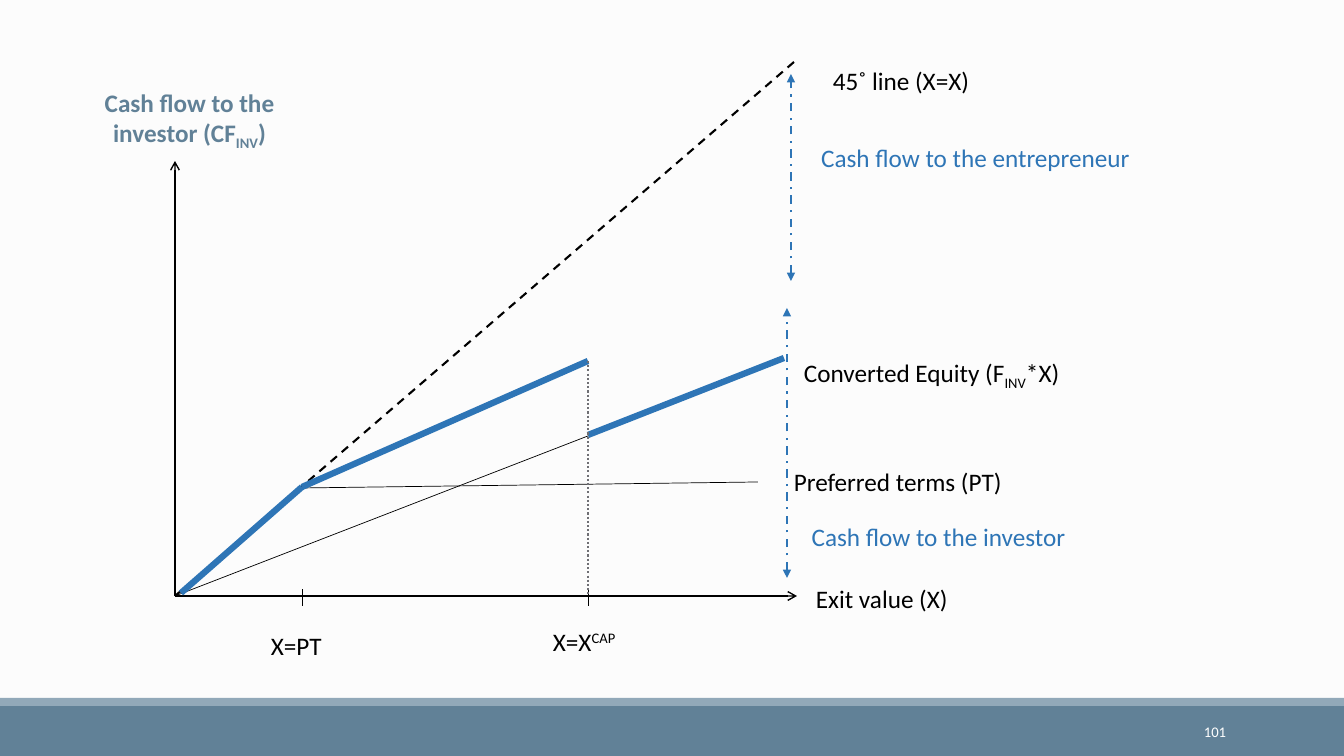
"""Build the slide on investor cash flow against exit value."""
import pptx
import pptx.util
import pptx.dml.color
import pptx.enum.dml
import pptx.enum.shapes
import pptx.enum.text
import pptx.oxml
import pptx.oxml.ns

RGBColor = pptx.dml.color.RGBColor
PAPER = RGBColor(0xFC, 0xFC, 0xFC)
SLATE = RGBColor(0x61, 0x81, 0x97)
MIST = RGBColor(0x92, 0xA9, 0xB9)
BLUE = RGBColor(0x2E, 0x75, 0xB6)
GREY = RGBColor(0x6F, 0x6F, 0x74)
BLACK = RGBColor(0, 0, 0)
WHITE = RGBColor(0xFF, 0xFF, 0xFF)

DASH = pptx.enum.dml.MSO_LINE
ALIGN = pptx.enum.text.PP_ALIGN
SCALE = 914400 / 100.8
WIDE, HIGH = 1344, 756
LEFT, BASE = 175, 596
PREF, CAP = 302, 588
SUB, SUPER = -25000, 30000


def px(*nums):
    """Turn px lengths into EMU."""
    return [round(num * SCALE) for num in nums]


def add_bar(slide, top, height, color):
    """Add a band across the full slide width."""
    kind = pptx.enum.shapes.MSO_SHAPE.RECTANGLE
    bar = slide.shapes.add_shape(kind, *px(0, top, WIDE, height))
    bar.shadow.inherit = False
    bar.fill.solid()
    bar.fill.fore_color.rgb = color
    bar.line.fill.background()


def add_line(slide, start, end, color=BLACK, width=0.5, dash=None, head=None, tail=None):
    """Add a straight line with optional dash and arrowheads."""
    kind = pptx.enum.shapes.MSO_CONNECTOR.STRAIGHT
    line = slide.shapes.add_connector(kind, *px(*start, *end))
    line.line.color.rgb = color
    line.line.width = pptx.util.Pt(width)
    if dash:
        line.line.dash_style = dash
    pen = line.line._get_or_add_ln()
    for tag, tip in (("a:headEnd", head), ("a:tailEnd", tail)):
        if tip:
            mark = pptx.oxml.parse_xml(f"<{tag} {pptx.oxml.ns.nsdecls('a')}/>")
            mark.set("type", tip)
            pen.append(mark)
    none = pptx.oxml.parse_xml(f"<a:effectLst {pptx.oxml.ns.nsdecls('a')}/>")
    line._element.spPr.append(none)


def add_label(slide, box, parts, color=BLACK, align=ALIGN.LEFT, size=18, bold=False):
    """Add a text box from (text, baseline) parts."""
    frame = slide.shapes.add_textbox(*px(*box)).text_frame
    frame.word_wrap = True
    para = frame.paragraphs[0]
    para.alignment = align
    for text, shift in parts:
        run = para.add_run()
        run.text = text
        run.font.name = "Calibri"
        run.font.size = pptx.util.Pt(size)
        run.font.bold = bold
        run.font.color.rgb = color
        if shift:
            run._r.get_or_add_rPr().set("baseline", str(shift))
    return frame


def add_axes(slide):
    """Add both axes and the ticks on the exit value axis."""
    for tip in ((LEFT, 161), (797, BASE)):
        add_line(slide, tip, (LEFT, BASE), width=1, head="arrow")
    for tick in (PREF, CAP):
        add_line(slide, (tick, 606), (tick, 589))


def add_curves(slide):
    """Add the guide lines, the payoff segments and the spans."""
    add_line(slide, (794, 62), (LEFT, BASE), width=1.5, dash=DASH.DASH)
    add_line(slide, (758, 482), (PREF, 488))
    add_line(slide, (784, 360), (LEFT, BASE))
    for span, top, low in ((787, 308, 578), (791, 74, 281)):
        add_line(slide, (span, low), (span, top), BLUE, 1.5, DASH.DASH_DOT,
                 "triangle", "triangle")
    for start, end in (
        ((CAP, 361), (PREF, 487)),
        ((181, 593), (PREF, 487)),
        ((784, 358), (CAP, 435)),
    ):
        add_line(slide, start, end, BLUE, 4.5)
    add_line(slide, (CAP, 361), (CAP, BASE), GREY, 1.5, DASH.ROUND_DOT)


def add_words(slide):
    """Add the labels of axes, lines and spans."""
    for box, parts in (
        ((784, 461, 232, 40), [("Preferred terms (PT)", 0)]),
        ((794, 352, 331, 40), [("Converted Equity (F", 0), ("INV", SUB), ("*X)", 0)]),
        ((823, 60, 331, 40), [("45˚ line (X=X)", 0)]),
        ((261, 625, 82, 40), [("X=PT", 0)]),
        ((543, 621, 120, 40), [("X=X", 0), ("CAP", SUPER)]),
        ((806, 578, 222, 40), [("Exit value (X)", 0)]),
    ):
        add_label(slide, box, parts)
    for box, text in (
        ((803, 137, 345, 40), "Cash flow to the entrepreneur"),
        ((797, 516, 283, 40), "Cash flow to the investor"),
    ):
        add_label(slide, box, [(text, 0)], BLUE, ALIGN.CENTER)
    parts = [("Cash flow to the investor (CF", 0), ("INV", SUB), (")", 0)]
    add_label(slide, (59, 82, 261, 72), parts, SLATE, ALIGN.CENTER, bold=True)


def main():
    """Build and save the slide."""
    deck = pptx.Presentation()
    deck.slide_width, deck.slide_height = px(WIDE, HIGH)
    slide = deck.slides.add_slide(deck.slide_layouts[6])
    slide.background.fill.solid()
    slide.background.fill.fore_color.rgb = PAPER
    add_bar(slide, 706, 50, SLATE)
    add_bar(slide, 698, 8, MIST)
    add_axes(slide)
    add_curves(slide)
    add_words(slide)
    page = add_label(slide, (1092, 712, 144, 40), [("101", 0)], WHITE, ALIGN.RIGHT, 10.5)
    page.vertical_anchor = pptx.enum.text.MSO_ANCHOR.MIDDLE
    deck.save("out.pptx")


if __name__ == "__main__":
    main()
